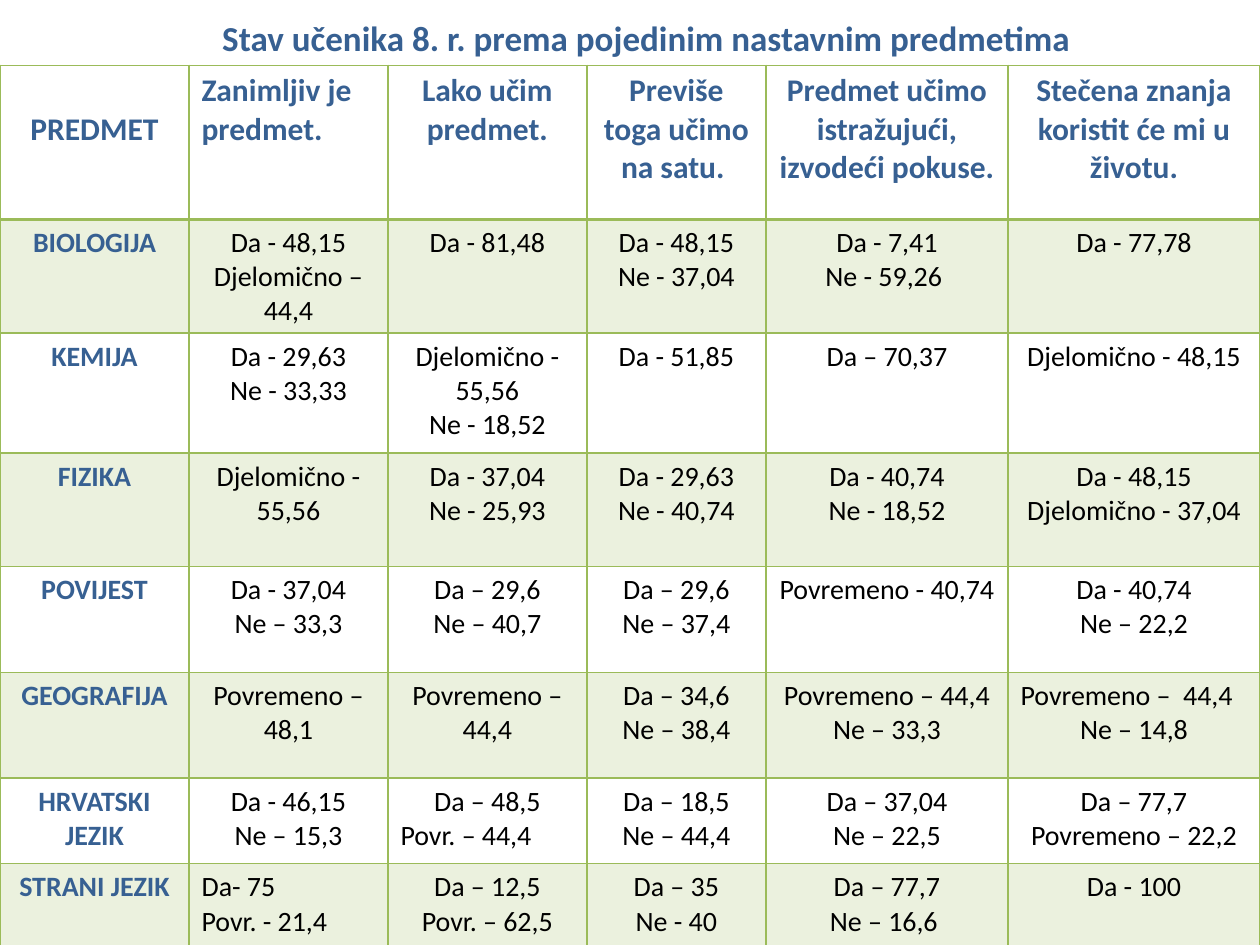
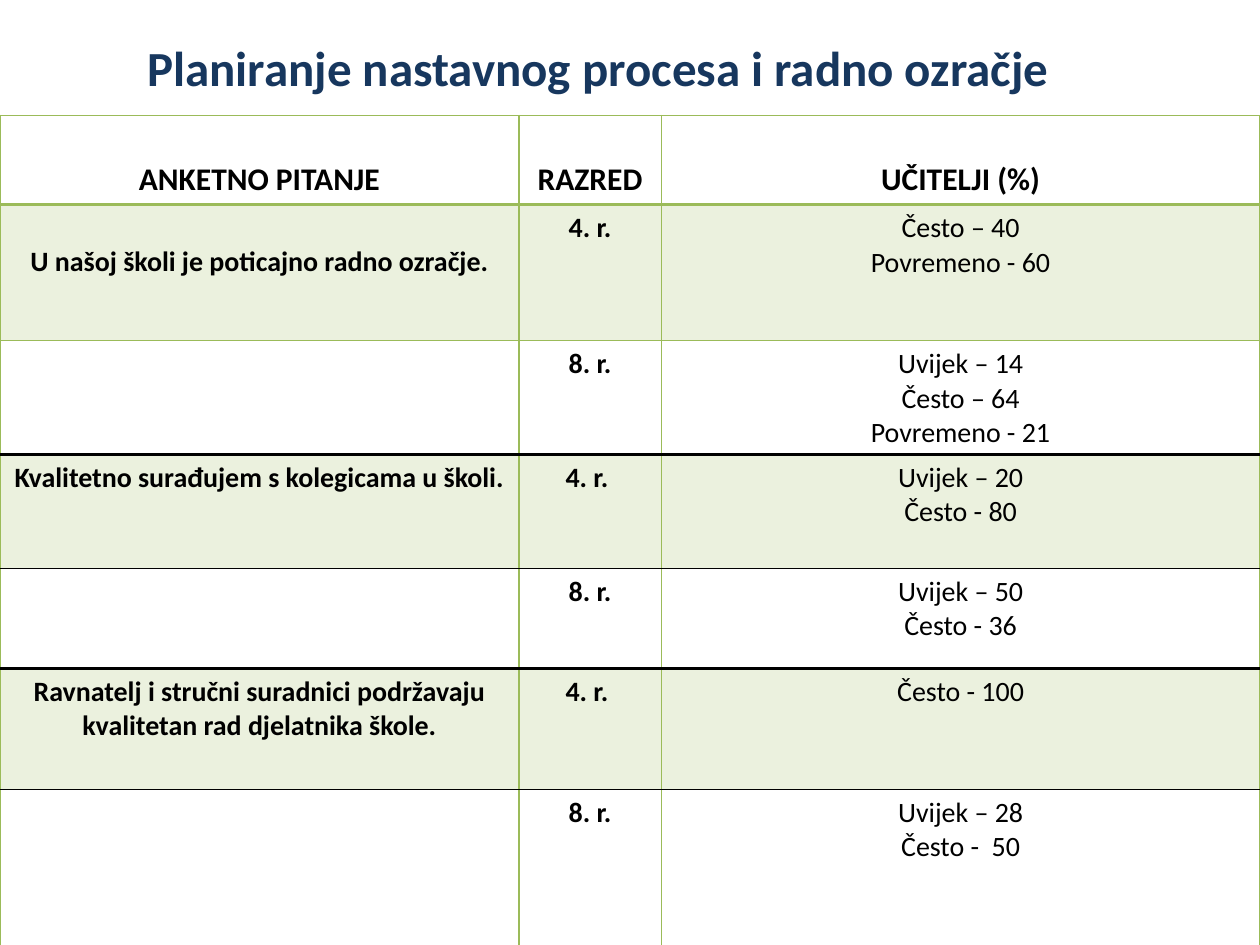
import pptx
import pptx.util
import pptx.dml.color
import pptx.enum.text
import pptx.oxml.ns
from lxml import etree

Cm = pptx.util.Cm
Pt = pptx.util.Pt
RGBColor = pptx.dml.color.RGBColor
ALIGN = pptx.enum.text.PP_ALIGN

FONT = "Calibri"
BLACK = RGBColor(0x00, 0x00, 0x00)
GREEN = RGBColor(0x9B, 0xBB, 0x59)
PALE_GREEN = RGBColor(0xEB, 0xF1, 0xDE)
BLUE = RGBColor(0x37, 0x60, 0x92)
NAVY = RGBColor(0x17, 0x37, 0x5E)

SLIDE_W, SLIDE_H = 25.4, 19.05
CELL_MARGIN_Y = 0.13
LINE_HEIGHT = 1.22 * 2.54 / 72
LEFT_MARK = "<"

THIN = (GREEN, 1)
HEADER_RULE = (GREEN, 2)
GROUP_RULE = (BLACK, 2.25)
HAIRLINE = (BLACK, 0.25)

SUBJECT_COLS = [3.81, 4.01, 4.01, 3.61, 4.88, 5.08]
SUBJECT_ROWS = [3.1, 2.28, 2.42, 2.29, 2.13, 2.13, 1.73, 2.13]
SUBJECT_RULES = [THIN, HEADER_RULE] + [THIN] * 7
SUBJECTS = [
    ["\nPREDMET", "<Zanimljiv je predmet.", "Lako učim predmet.",
     "Previše toga učimo na satu. ", "Predmet učimo istražujući,\nizvodeći pokuse.",
     "Stečena znanja koristit će mi u životu."],
    ["BIOLOGIJA", "Da - 48,15\nDjelomično – 44,4", "Da - 81,48",
     "Da - 48,15\nNe - 37,04", "Da - 7,41\nNe - 59,26 ", "Da - 77,78"],
    ["KEMIJA", "Da - 29,63\nNe - 33,33", "Djelomično - 55,56\nNe - 18,52",
     "Da - 51,85", "Da – 70,37", "Djelomično - 48,15"],
    ["FIZIKA", "Djelomično - 55,56", "Da - 37,04\nNe - 25,93",
     "Da - 29,63\nNe - 40,74", "Da - 40,74\nNe - 18,52", "Da - 48,15\nDjelomično - 37,04"],
    ["POVIJEST", "Da - 37,04\nNe – 33,3", "Da – 29,6\nNe – 40,7",
     "Da – 29,6\nNe – 37,4", "Povremeno - 40,74", "Da - 40,74\nNe – 22,2"],
    ["GEOGRAFIJA", "Povremeno – 48,1", "Povremeno – 44,4",
     "Da – 34,6\nNe – 38,4", "Povremeno – 44,4\nNe – 33,3", "<Povremeno –  44,4\nNe – 14,8"],
    ["HRVATSKI JEZIK", "Da - 46,15\nNe – 15,3", "Da – 48,5\n<Povr. – 44,4",
     "Da – 18,5\nNe – 44,4", "Da – 37,04\nNe – 22,5", "Da – 77,7\nPovremeno – 22,2"],
    ["STRANI JEZIK", "<Da- 75\n<Povr. - 21,4", "Da – 12,5\nPovr. – 62,5",
     "Da – 35\nNe - 40", "Da – 77,7\nNe – 16,6 ", "Da - 100"],
]

SURVEY_COLS = [10.46, 2.87, 12.07]
SURVEY_ROWS = [1.78, 2.74, 2.29, 2.29, 2.03, 2.44, 3.15]
SURVEY_RULES = [THIN, HEADER_RULE, THIN, GROUP_RULE, HAIRLINE, GROUP_RULE, HAIRLINE, THIN]
SURVEY = [
    ["\nANKETNO PITANJE", "\nRAZRED", "\nUČITELJI (%)"],
    ["\nU našoj školi je poticajno radno ozračje.", "4. r.", "Često – 40\nPovremeno - 60"],
    ["", "8. r.", "Uvijek – 14\nČesto – 64\nPovremeno - 21"],
    ["Kvalitetno surađujem s kolegicama u školi.", "4. r. ", "Uvijek – 20\nČesto - 80"],
    ["", "8. r.", "Uvijek – 50\nČesto - 36"],
    ["Ravnatelj i stručni suradnici podržavaju kvalitetan rad djelatnika škole.",
     "4. r. ", "Često - 100"],
    ["", "8. r.", "Uvijek – 28\nČesto -  50"],
]


def write_text(tf, text, size=16, color=BLACK, bold=False):
    tf.word_wrap = True
    for i, line in enumerate(text.split("\n")):
        p = tf.paragraphs[0] if i == 0 else tf.add_paragraph()
        p.alignment = ALIGN.LEFT if line.startswith(LEFT_MARK) else ALIGN.CENTER
        p.font.size = Pt(size)
        if line:
            r = p.add_run()
            r.text = line.removeprefix(LEFT_MARK)
            r.font.name = FONT
            r.font.size = Pt(size)
            r.font.bold = bold
            r.font.color.rgb = color


def add_title(s, box, text, **text_format):
    sp = s.shapes.add_textbox(*(Cm(v) for v in box))
    write_text(sp.text_frame, text, bold=True, **text_format)


def set_borders(cell, **sides):
    tcPr = cell._tc.get_or_add_tcPr()
    for i, side in enumerate(("L", "R", "T", "B")):
        color, width = sides[side]
        ln = etree.Element(pptx.oxml.ns.qn("a:ln" + side), w=str(int(Pt(width))))
        fill = etree.SubElement(ln, pptx.oxml.ns.qn("a:solidFill"))
        etree.SubElement(fill, pptx.oxml.ns.qn("a:srgbClr"), val=str(color))
        tcPr.insert(i, ln)


def add_survey_table(s, left, top, cols, heights, rows, rules, label_cols, label_color):
    frame = s.shapes.add_table(len(rows), len(cols), Cm(left), Cm(top),
                               Cm(sum(cols)), Cm(sum(heights)))
    table = frame.table
    table.first_row = table.horz_banding = False
    for column, width in zip(table.columns, cols):
        column.width = Cm(width)
    for i, (row, height) in enumerate(zip(rows, heights)):
        table.rows[i].height = Cm(height)
        size = 18 if i == 0 else 16
        for j, text in enumerate(row):
            cell = table.cell(i, j)
            is_label = i == 0 or j < label_cols
            lines_above = len(text) - len(text.lstrip("\n"))
            cell.margin_top = Cm(CELL_MARGIN_Y + lines_above * size * LINE_HEIGHT)
            cell.margin_bottom = Cm(CELL_MARGIN_Y)
            write_text(cell.text_frame, text.lstrip("\n"), size=size, bold=is_label,
                       color=label_color if is_label else BLACK)
            if i % 2:
                cell.fill.solid()
                cell.fill.fore_color.rgb = PALE_GREEN
            else:
                cell.fill.background()
            set_borders(cell, L=THIN, R=THIN, T=rules[i], B=rules[i + 1])


def add_subjects_slide(prs):
    s = prs.slides.add_slide(prs.slide_layouts[6])
    add_title(s, (2.97, 0.2, 20.12, 1.12),
              "Stav učenika 8. r. prema pojedinim nastavnim predmetima", size=20, color=BLUE)
    add_survey_table(s, 0, 1.32, SUBJECT_COLS, SUBJECT_ROWS, SUBJECTS, SUBJECT_RULES,
                     label_cols=1, label_color=BLUE)


def add_planning_slide(prs):
    s = prs.slides.add_slide(prs.slide_layouts[6])
    add_title(s, (2.46, 0.64, 19.18, 1.45),
              "Planiranje nastavnog procesa i radno ozračje", size=28, color=NAVY)
    add_survey_table(s, 0, 2.33, SURVEY_COLS, SURVEY_ROWS, SURVEY, SURVEY_RULES,
                     label_cols=2, label_color=BLACK)


def main():
    prs = pptx.Presentation()
    prs.slide_width, prs.slide_height = Cm(SLIDE_W), Cm(SLIDE_H)
    add_subjects_slide(prs)
    add_planning_slide(prs)
    prs.save("out.pptx")


if __name__ == "__main__":
    main()
